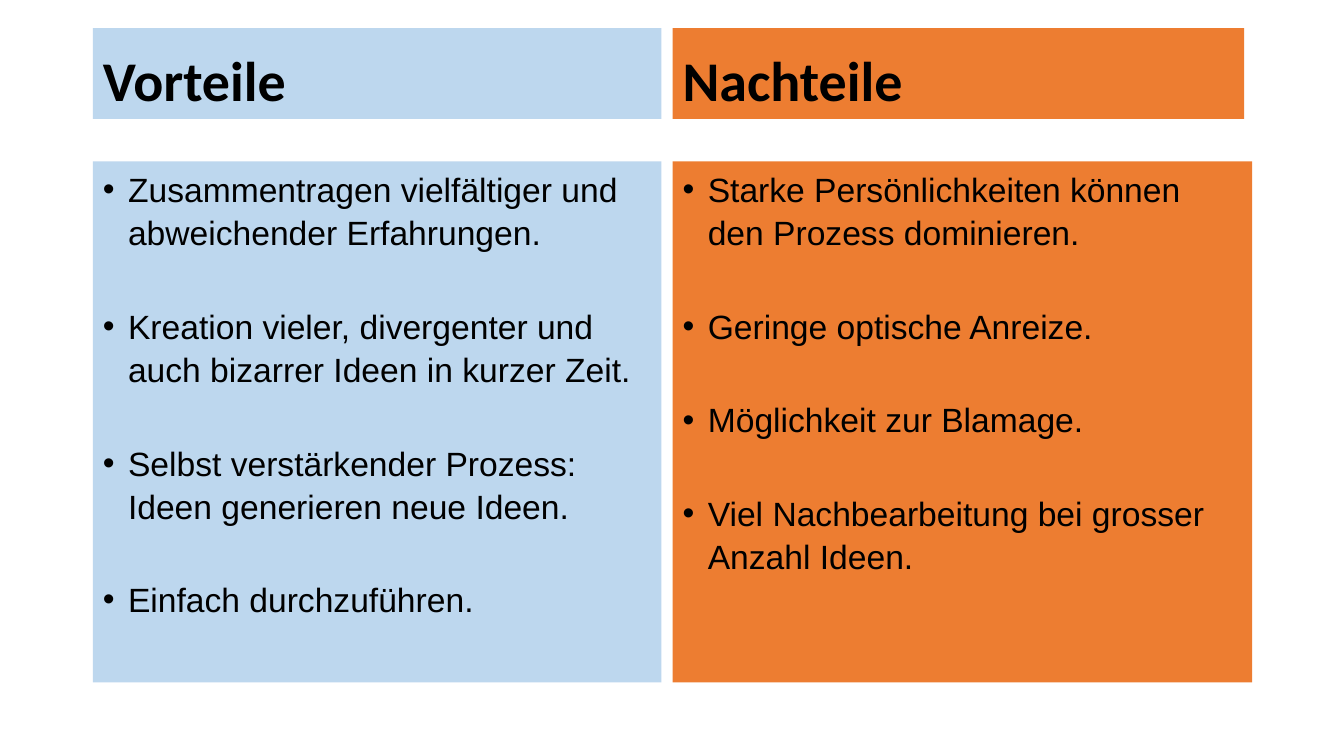
from lxml.etree import SubElement
from pptx import Presentation
from pptx.dml.color import RGBColor
from pptx.enum.text import MSO_ANCHOR as Anchor, MSO_AUTO_SIZE as AutoSize, PP_ALIGN as Align
from pptx.oxml.ns import qn
from pptx.util import Inches, Pt

BLACK = RGBColor(0x00, 0x00, 0x00)
BLUE = RGBColor(0xBD, 0xD7, 0xEE)
ORANGE = RGBColor(0xED, 0x7D, 0x31)

COMPARISON_LAYOUT = 4
HEADING_TOP, HEADING_HEIGHT = 0.28, 0.9
LIST_TOP, LIST_HEIGHT = 1.6, 5.17

COLUMNS = [
    (1, 2, 0.92, 5.64, 5.64, BLUE, "Vorteile", [
        "Zusammentragen vielfältiger und abweichender Erfahrungen.",
        "Kreation vieler, divergenter und auch bizarrer Ideen in kurzer Zeit.",
        "Selbst verstärkender Prozess: Ideen generieren neue Ideen.",
        "Einfach durchzuführen.",
    ]),
    (3, 4, 6.67, 5.67, 5.75, ORANGE, "Nachteile", [
        "Starke Persönlichkeiten können den Prozess dominieren.",
        "Geringe optische Anreize.",
        "Möglichkeit zur Blamage.",
        "Viel Nachbearbeitung bei grosser Anzahl Ideen.",
    ]),
]


class ComparisonPage:
    def __init__(self, deck):
        self.page = deck.slides.add_slide(deck.slide_layouts[COMPARISON_LAYOUT])
        title = self.page.shapes.title.element
        title.getparent().remove(title)
        self.boxes = {box.placeholder_format.idx: box for box in self.page.placeholders}

    def panel(self, index, left, top, width, height, color, anchor):
        box = self.boxes[index]
        box.left, box.top = Inches(left), Inches(top)
        box.width, box.height = Inches(width), Inches(height)
        box.fill.solid()
        box.fill.fore_color.rgb = color
        frame = box.text_frame
        frame.word_wrap = True
        frame.auto_size = AutoSize.NONE
        frame.vertical_anchor = anchor
        return frame

    def add_text(self, para, text, font, size, bold, line, before, after, indent):
        para.alignment = Align.LEFT
        para.line_spacing = line
        para.space_before, para.space_after = Pt(before), Pt(after)
        settings = para._p.get_or_add_pPr()
        settings.set("marL", str(Inches(indent)))
        settings.set("indent", str(-Inches(indent)))
        span = para.add_run()
        span.text = text
        span.font.name, span.font.size, span.font.bold = font, Pt(size), bold
        span.font.color.rgb = BLACK
        return settings

    def heading(self, index, left, width, color, text):
        frame = self.panel(index, left, HEADING_TOP, width, HEADING_HEIGHT, color, Anchor.BOTTOM)
        settings = self.add_text(frame.paragraphs[0], text, "Calibri", 40, True, 0.9, 10, 0, 0)
        SubElement(settings, qn("a:buNone"))

    def bullets(self, index, left, width, color, items):
        frame = self.panel(index, left, LIST_TOP, width, LIST_HEIGHT, color, Anchor.TOP)
        for number, item in enumerate(items):
            para = frame.add_paragraph() if number else frame.paragraphs[0]
            settings = self.add_text(para, item, "Arial", 24, False, 1.07, 18, 18, 0.25)
            SubElement(settings, qn("a:buFont")).set("typeface", "Arial")
            SubElement(settings, qn("a:buChar")).set("char", "•")


def main():
    deck = Presentation()
    deck.slide_width, deck.slide_height = Inches(13.33), Inches(7.5)
    comparison = ComparisonPage(deck)
    for head, body, left, head_width, body_width, color, title, items in COLUMNS:
        comparison.heading(head, left, head_width, color, title)
        comparison.bullets(body, left, body_width, color, items)
    deck.save("out.pptx")


if __name__ == "__main__":
    main()
